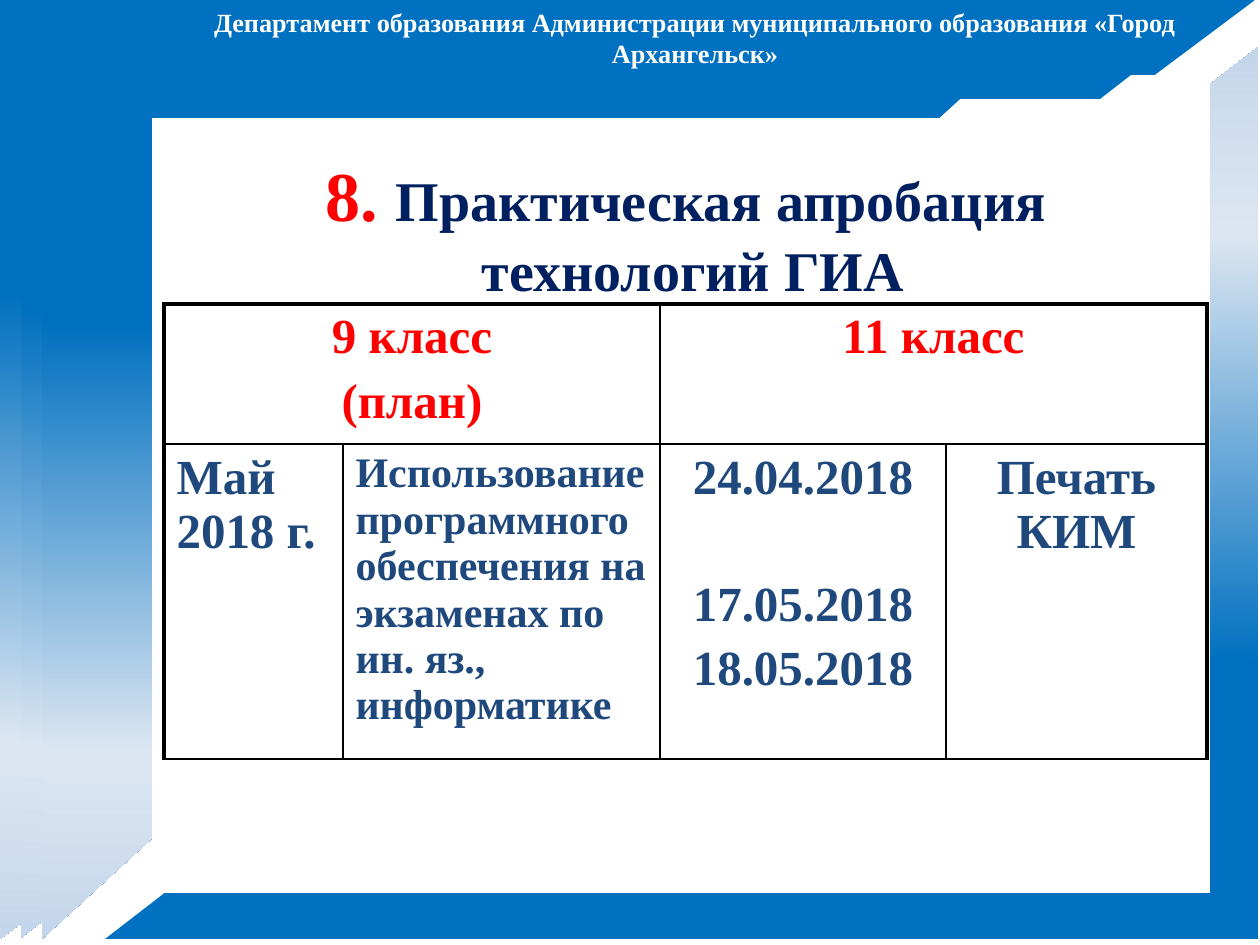
from lxml.etree import SubElement
from pptx import Presentation
from pptx.dml.color import RGBColor
from pptx.enum.shapes import MSO_SHAPE
from pptx.enum.text import PP_ALIGN
from pptx.oxml.ns import qn
from pptx.util import Emu, Pt

FONT = "Times New Roman"
WHITE = RGBColor(0xFF, 0xFF, 0xFF)
BLACK = RGBColor(0x00, 0x00, 0x00)
RED = RGBColor(0xFF, 0x00, 0x00)
NAVY = RGBColor(0x00, 0x20, 0x60)
STEEL = RGBColor(0x1F, 0x49, 0x7D)
GRADIENT = [
    (31, RGBColor(0x00, 0x70, 0xC0)),
    (79, RGBColor(0xDC, 0xE6, 0xF2)),
    (100, RGBColor(0xC4, 0xD6, 0xEB)),
    (100, RGBColor(0xFF, 0xEB, 0xFA)),
]

# Frames: left, top, width, height, top arm, side arm, rotation
FRAMES = [
    (0, 0, 1255, 939, 75, 150, 0),
    (21, 26, 1173, 912, 73, 102, 0),
    (42, 47, 975, 892, 71, 110, 0),
    (105, 47, 1153, 892, 46, 48, 180),
]
COLUMNS = [179, 317, 286, 261]
ROWS = [79, 89]  # minimum heights, the rows grow with their text


def px(value):
    return Emu(round(value * 914400 / 126))


def box(*lengths):
    return [px(length) for length in lengths]


def add_color(parent, color):
    SubElement(parent, qn("a:srgbClr"), val=str(color))


def fill_gradient(shape):
    """Replace the default two stops with the frame's downward gradient."""
    shape.fill.gradient()
    shape.fill.gradient_angle = 270
    gradient = shape.element.spPr.find(qn("a:gradFill"))
    gradient.set("rotWithShape", "1")
    stops = gradient.find(qn("a:gsLst"))
    for stop in list(stops):
        stops.remove(stop)
    for position, color in GRADIENT:
        add_color(SubElement(stops, qn("a:gs"), pos=str(position * 1000)), color)


def add_frame(slide, left, top, width, height, top_arm, side_arm, rotation):
    frame = slide.shapes.add_shape(MSO_SHAPE.HALF_FRAME, *box(left, top, width, height))
    frame.adjustments[0] = top_arm / min(width, height)
    frame.adjustments[1] = side_arm / min(width, height)
    frame.rotation = rotation
    frame.shadow.inherit = False
    frame.line.fill.background()
    fill_gradient(frame)


def set_font(font, size, color):
    font.name = FONT
    font.size = Pt(size)
    font.bold = True
    font.color.rgb = color


def add_text_box(slide, left, top, width, height):
    frame = slide.shapes.add_textbox(*box(left, top, width, height)).text_frame
    frame.word_wrap = True
    paragraph = frame.paragraphs[0]
    paragraph.alignment = PP_ALIGN.CENTER
    return paragraph


def add_run(paragraph, text, size, color):
    run = paragraph.add_run()
    run.text = text
    set_font(run.font, size, color)


def add_header(slide):
    paragraph = add_text_box(slide, 120, 0, 1150, 44)
    paragraph.text = ("Департамент образования Администрации муниципального "
                      "образования «Город Архангельск»")
    set_font(paragraph.font, 15, WHITE)


def add_title(slide):
    paragraph = add_text_box(slide, 126, 145, 1134, 79)
    add_run(paragraph, "8. ", 40, RED)
    add_run(paragraph, "Практическая апробация ", 32, NAVY)
    paragraph.add_line_break()
    add_run(paragraph, "технологий ГИА", 32, NAVY)


def set_borders(cell, widths):
    """Draw the cell's left, right, top and bottom borders."""
    properties = cell._tc.get_or_add_tcPr()
    for index, (side, width) in enumerate(zip("LRTB", widths)):
        line = SubElement(properties, qn(f"a:ln{side}"), w=str(Pt(width)))
        add_color(SubElement(line, qn("a:solidFill")), BLACK)
        properties.remove(line)
        properties.insert(index, line)


def fill_cell(cell, lines, size, color, alignment=PP_ALIGN.CENTER):
    """Write (text, space before) pairs, one paragraph each."""
    frame = cell.text_frame
    for index, (text, space) in enumerate(lines):
        paragraph = frame.add_paragraph() if index else frame.paragraphs[0]
        paragraph.text = text
        paragraph.alignment = alignment
        paragraph.space_before = Pt(space)
        set_font(paragraph.font, size, color)


def add_schedule(slide):
    table = slide.shapes.add_table(
        len(ROWS), len(COLUMNS), *box(164, 304, sum(COLUMNS), sum(ROWS))).table
    table.first_row = False
    table.horz_banding = False
    for column, width in zip(table.columns, COLUMNS):
        column.width = px(width)
    for row, height in zip(table.rows, ROWS):
        row.height = px(height)

    # Each class heading spans two columns
    for column in (0, 2):
        table.cell(0, column).merge(table.cell(0, column + 1))

    # Thick outline on the left, right and top, thin lines elsewhere
    for row in range(len(ROWS)):
        for column in range(len(COLUMNS)):
            cell = table.cell(row, column)
            cell.fill.background()
            span = cell.span_width if cell.is_merge_origin else 1
            at_right = column + span == len(COLUMNS)
            thick = [column == 0, at_right, row == 0, False]
            set_borders(cell, [2.25 if side else 1 for side in thick])

    fill_cell(table.cell(0, 0), [("9 класс", 0), ("(план)", 5.6)], 28, RED)
    fill_cell(table.cell(0, 2), [("11 класс", 0)], 28, RED)

    fill_cell(table.cell(1, 0), [("Май 2018 г.", 0)], 28, STEEL, PP_ALIGN.LEFT)
    usage = "Использование программного обеспечения на экзаменах по ин. яз., информатике"
    fill_cell(table.cell(1, 1), [(usage, 0)], 24, STEEL, PP_ALIGN.LEFT)
    dates = [("24.04.2018", 0), ("17.05.2018", 42), ("18.05.2018", 5.6)]
    fill_cell(table.cell(1, 2), dates, 28, STEEL)
    fill_cell(table.cell(1, 3), [("Печать КИМ", 0)], 28, STEEL)


def main():
    presentation = Presentation()
    presentation.slide_width, presentation.slide_height = box(1260, 945)
    slide = presentation.slides.add_slide(presentation.slide_layouts[6])
    for frame in FRAMES:
        add_frame(slide, *frame)
    add_header(slide)
    add_title(slide)
    add_schedule(slide)
    presentation.save("out.pptx")


if __name__ == "__main__":
    main()
